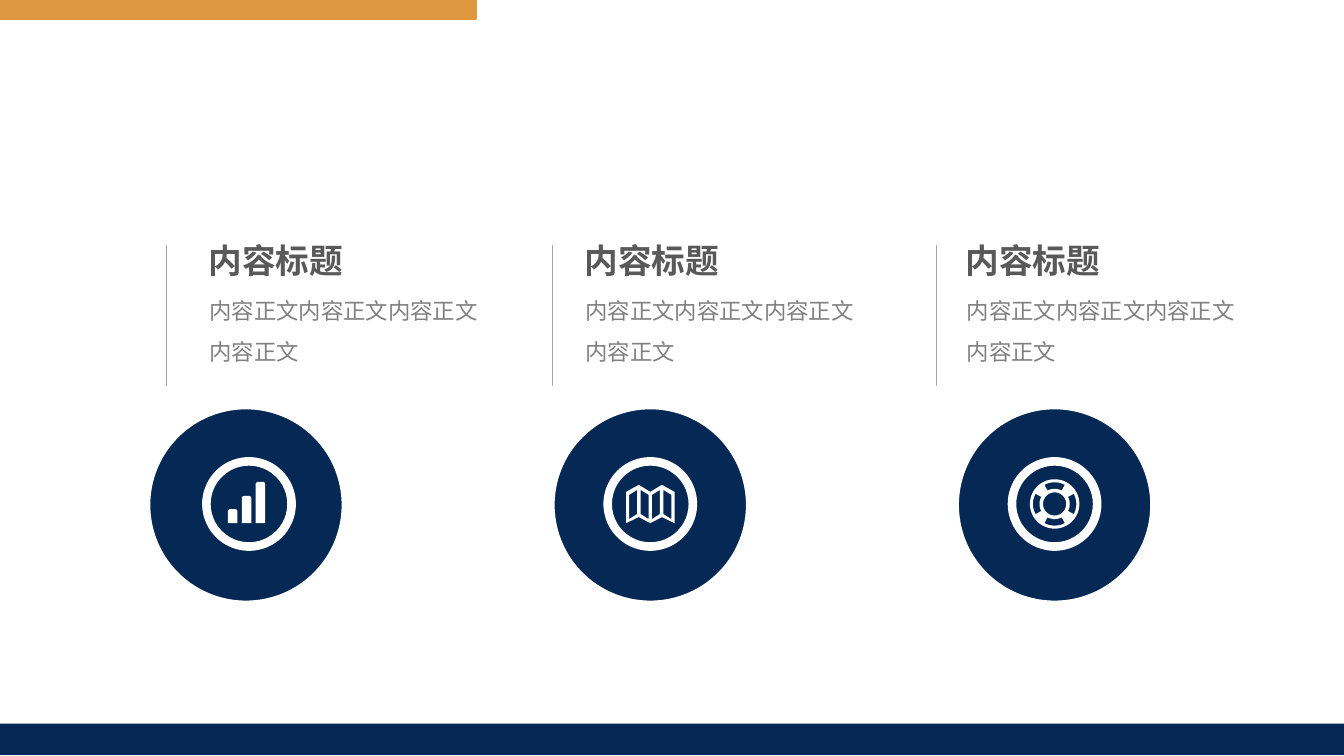
import math
from dataclasses import dataclass
from typing import Callable

import pptx
import pptx.dml.color
import pptx.enum.shapes
import pptx.enum.text
import pptx.oxml.ns
import pptx.oxml.xmlchemy
import pptx.util
from pptx.util import Inches

SHAPE = pptx.enum.shapes.MSO_SHAPE
NAVY, ORANGE, WHITE = "062855", "DE9640", "FFFFFF"
HEADING_GREY, BODY_GREY, RULE_GREY = "595959", "808080", "A6A6A6"
FONT = "Noto Sans CJK SC"

DISC_SIZE = 1.96
DISC_LEFT, DISC_TOP, DISC_STEP = 1.46, 4.03, 4.01
RING_SIZE, RING_WIDTH = 0.93, 0.085
ICON_Y = 5.0
RULE_TOP, RULE_BOTTOM = 2.43, 3.83

Point = tuple[float, float]


@dataclass
class Topic:
    heading: str
    body: list[str]
    rule_x: float
    text_left: float
    heading_width: float
    body_width: float
    icon_x: float
    draw_icon: Callable


def rgb(color: str) -> pptx.dml.color.RGBColor:
    return pptx.dml.color.RGBColor.from_string(color)


def paint(shape, fill: str, line: str | None = None, line_width: float = 1) -> None:
    shape.shadow.inherit = False
    shape.fill.solid()
    shape.fill.fore_color.rgb = rgb(fill)
    if line:
        shape.line.color.rgb = rgb(line)
        shape.line.width = pptx.util.Pt(line_width)
    else:
        shape.line.fill.background()


def add_preset(shapes, kind, left: float, top: float, width: float, height: float,
               fill: str, line: str | None = None, line_width: float = 1):
    shape = shapes.add_shape(kind, Inches(left), Inches(top), Inches(width), Inches(height))
    paint(shape, fill, line, line_width)
    return shape


def add_outline(shapes, center_x: float, contours: list[list[Point]]) -> None:
    """Draw one white freeform; contours after the first are holes, all relative to the icon centre."""
    placed = [[(Inches(center_x + x), Inches(ICON_Y + y)) for x, y in contour]
              for contour in contours]
    builder = shapes.build_freeform(*placed[0][0])
    builder.add_line_segments(placed[0][1:], close=True)
    for hole in placed[1:]:
        builder.move_to(*hole[0])
        builder.add_line_segments(hole[1:], close=True)
    paint(builder.convert_to_shape(), WHITE)


def arc(radius: float, start: int, end: int) -> list[Point]:
    """Points every four degrees from start to end."""
    step = 4 if end > start else -4
    return [(radius * math.cos(math.radians(angle)), radius * math.sin(math.radians(angle)))
            for angle in range(start, end + step, step)]


def draw_bars(shapes, center_x: float) -> None:
    width, base = 0.095, 0.19
    for index, height in enumerate((0.14, 0.27, 0.41)):
        bar = add_preset(shapes, SHAPE.ROUND_2_SAME_RECTANGLE, center_x - 0.21 + 0.138 * index,
                         ICON_Y + base - height, width, height, WHITE)
        bar.adjustments[0] = 0.25


def draw_map(shapes, center_x: float) -> None:
    sheet = [(-0.24, -0.12), (-0.115, -0.19), (0, -0.12), (0.115, -0.19), (0.24, -0.12),
             (0.24, 0.19), (0.115, 0.13), (0, 0.19), (-0.115, 0.13), (-0.24, 0.19)]
    panels = []
    for index in range(4):
        left = -0.21 + 0.113 * index
        right = left + 0.08
        left_top, right_top = (-0.09, -0.14) if index % 2 == 0 else (-0.14, -0.09)
        panels.append([(left, left_top), (right, right_top),
                       (right, right_top + 0.24), (left, left_top + 0.24)])
    add_outline(shapes, center_x, [sheet, *panels])


def draw_lifebuoy(shapes, center_x: float) -> None:
    slots = [arc(0.215, middle - 28, middle + 28) + arc(0.15, middle + 28, middle - 28)
             for middle in range(0, 360, 90)]
    add_outline(shapes, center_x, [arc(0.245, 0, 356), arc(0.115, 0, 356), *slots])


def add_rule(shapes, x: float) -> None:
    rule = shapes.add_connector(pptx.enum.shapes.MSO_CONNECTOR.STRAIGHT,
                                Inches(x), Inches(RULE_TOP), Inches(x), Inches(RULE_BOTTOM))
    rule.line.color.rgb = rgb(RULE_GREY)
    rule.line.width = pptx.util.Pt(0.5)
    rule._element.spPr.append(pptx.oxml.xmlchemy.OxmlElement("a:effectLst"))


def add_text(shapes, left: float, top: float, width: float, height: float, lines: list[str],
             size: int, color: str, bold: bool = False, spacing: float = 1.0) -> None:
    box = shapes.add_textbox(Inches(left), Inches(top), Inches(width), Inches(height))
    frame = box.text_frame
    frame.word_wrap = True
    frame.auto_size = pptx.enum.text.MSO_AUTO_SIZE.SHAPE_TO_FIT_TEXT
    frame.text = "\n".join(lines)
    for paragraph in frame.paragraphs:
        paragraph.line_spacing = spacing
        font = paragraph.font
        font.size = pptx.util.Pt(size)
        font.bold = bold
        font.color.rgb = rgb(color)
        font.name = FONT
        east_asian = pptx.oxml.xmlchemy.OxmlElement("a:ea")
        east_asian.set("typeface", FONT)
        paragraph._p.pPr.find(pptx.oxml.ns.qn("a:defRPr")).append(east_asian)


def add_topic(shapes, index: int, topic: Topic) -> None:
    add_preset(shapes, SHAPE.OVAL, DISC_LEFT + DISC_STEP * index, DISC_TOP,
               DISC_SIZE, DISC_SIZE, NAVY, WHITE, 4.5)
    add_rule(shapes, topic.rule_x)
    topic.draw_icon(shapes, topic.icon_x)
    ring = add_preset(shapes, SHAPE.DONUT, topic.icon_x - RING_SIZE / 2, ICON_Y - RING_SIZE / 2,
                      RING_SIZE, RING_SIZE, WHITE)
    ring.adjustments[0] = RING_WIDTH / RING_SIZE
    add_text(shapes, topic.text_left, 2.33, topic.heading_width, 0.5,
             [topic.heading], 24, HEADING_GREY, bold=True)
    add_text(shapes, topic.text_left + 0.01, 2.77, topic.body_width, 0.86,
             topic.body, 16, BODY_GREY, spacing=1.5)


def main() -> None:
    heading = "内容标题"
    body = ["内容正文内容正文内容正文", "内容正文"]
    topics = [
        Topic(heading, body, 1.65, 1.97, 2.25, 3.18, 2.47, draw_bars),
        Topic(heading, body, 5.48, 5.7, 2.04, 3.28, 6.45, draw_map),
        Topic(heading, body, 9.29, 9.48, 1.82, 3.09, 10.46, draw_lifebuoy),
    ]
    presentation = pptx.Presentation()
    presentation.slide_width = Inches(13.33)
    presentation.slide_height = Inches(7.5)
    shapes = presentation.slides.add_slide(presentation.slide_layouts[6]).shapes

    add_preset(shapes, SHAPE.RECTANGLE, 0, 0, 4.72, 0.19, ORANGE, ORANGE)
    add_preset(shapes, SHAPE.RECTANGLE, 0, 7.18, 13.33, 0.31, NAVY)
    for index, topic in enumerate(topics):
        add_topic(shapes, index, topic)
    presentation.save("out.pptx")


if __name__ == "__main__":
    main()
